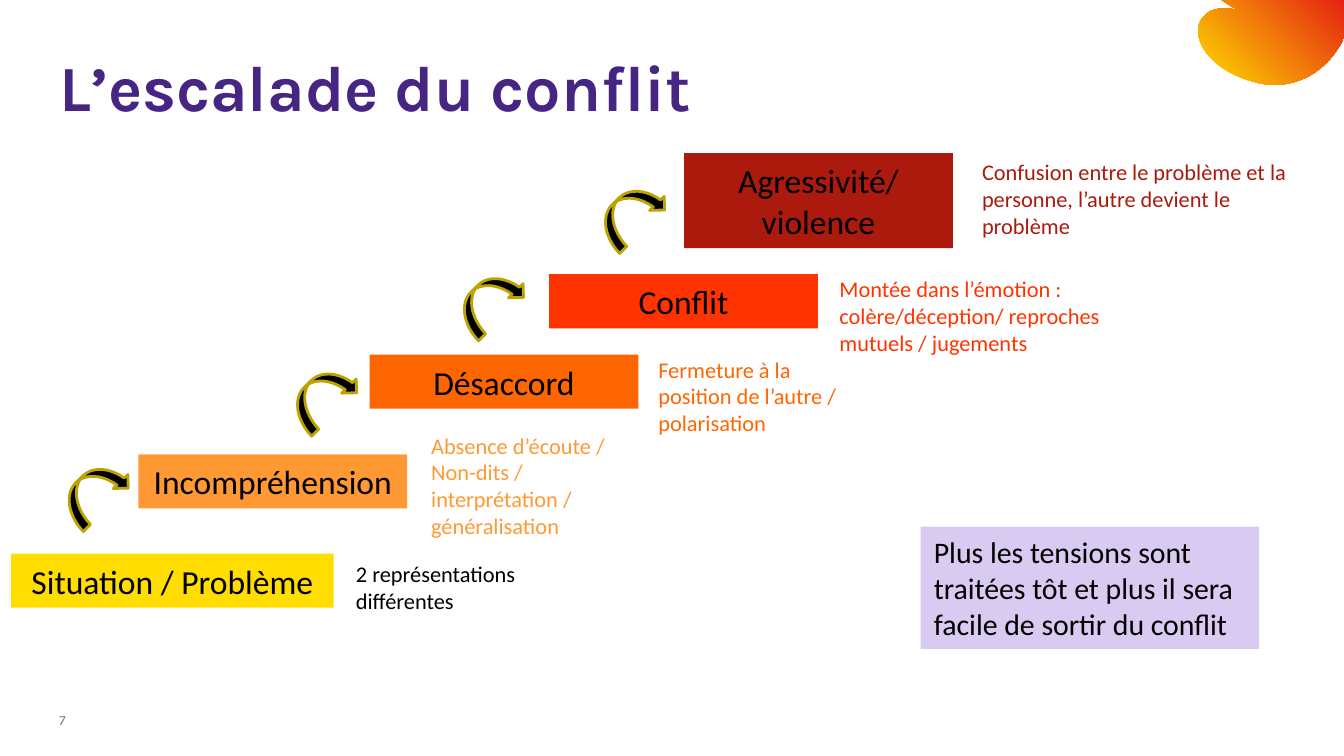
from dataclasses import dataclass
from typing import NamedTuple, Optional

from pptx import Presentation
from pptx.dml.color import RGBColor
from pptx.enum.shapes import MSO_SHAPE as Preset
from pptx.enum.text import MSO_ANCHOR as Anchor, MSO_AUTO_SIZE as AutoSize, PP_ALIGN as Align
from pptx.util import Pt


@dataclass(frozen=True)
class Theme:
    heading_font: str = "Karla"
    body_font: str = "Calibri"
    title_size: float = 34.5
    step_size: float = 18
    advice_size: float = 16
    note_size: float = 12
    number_size: float = 7.5
    title: str = "472583"
    number: str = "808080"
    ink: str = "000000"
    arrow_line: str = "BDA300"
    advice: str = "D8CAF0"
    blob_start: str = "FFDD00"
    blob_end: str = "E42312"


THEME = Theme()


class Area(NamedTuple):
    left: float
    top: float
    width: float
    height: float

    def lengths(self) -> list[Pt]:
        return [Pt(value) for value in self]


class Style(NamedTuple):
    size: float
    colour: str = THEME.ink
    font: str = THEME.body_font
    bold: bool = False


class Step(NamedTuple):
    label: str
    colour: str
    area: Area
    note: str
    note_area: Area
    note_colour: str
    arrow: Optional[tuple[float, float]] = None  # towards the next step


STEPS = [
    Step("Situation / Problème", "FFDD00", Area(6, 296.6, 172.8, 29),
         "2 représentations différentes", Area(183.6, 296.6, 120.2, 36), THEME.ink, (31.7, 252.7)),
    Step("Incompréhension", "FF9933", Area(74.2, 243.4, 144, 29),
         "Absence d’écoute / Non-dits / interprétation / généralisation",
         Area(223.9, 227.7, 120.2, 65.5), "FF9933", (154, 201.6)),
    Step("Désaccord", "FF6600", Area(198, 190, 144, 29),
         "Fermeture à la position de l’autre / polarisation",
         Area(345.6, 187, 120.2, 51), "FF6600", (243.4, 150.5)),
    Step("Conflit", "FF3300", Area(294.2, 146.9, 144, 29),
         "Montée dans l’émotion : colère/déception/ reproches mutuels / jugements",
         Area(442.6, 144, 174.2, 51), "FF3300", (319, 103.7)),
    Step("Agressivité/ violence", "AB1A0D", Area(366.5, 82, 144, 51),
         "Confusion entre le problème et la personne, l’autre devient le problème",
         Area(519, 81.4, 188.6, 51), "AB1A0D"),
]

BLOB_START = [(654.5, 0), (720, 0), (720, 18.7), (719.3, 21.6)]
BLOB_CURVES = [
    [(710.6, 38.9), (692.6, 49.7), (671.8, 43.9)],
    [(645.1, 36.7), (635.8, 16.6), (645.8, 7.9)],
    [(649.4, 4.3), (655.9, 3.6), (665.3, 5.8)],
    [(663.1, 5), (661, 4.3), (658.8, 2.9)],
]


def rgb(colour: str) -> RGBColor:
    return RGBColor.from_string(colour)


def write(box, text: str, style: Style, align=Align.LEFT):
    frame = box.text_frame
    frame.word_wrap = True
    para = frame.paragraphs[0]
    para.alignment = align
    span = para.add_run()
    span.text = text
    span.font.name = style.font
    span.font.size = Pt(style.size)
    span.font.bold = style.bold
    span.font.color.rgb = rgb(style.colour)
    return para


def add_panel(page, area: Area, fill: str, text: str, style: Style, align=Align.LEFT) -> None:
    box = page.shapes.add_shape(Preset.RECTANGLE, *area.lengths())
    box.shadow.inherit = False
    box.fill.solid()
    box.fill.fore_color.rgb = rgb(fill)
    box.line.fill.background()
    write(box, text, style, align)
    box.text_frame.auto_size = AutoSize.SHAPE_TO_FIT_TEXT


def add_note(page, area: Area, text: str, style: Style) -> None:
    box = page.shapes.add_textbox(*area.lengths())
    write(box, text, style)
    box.text_frame.auto_size = AutoSize.SHAPE_TO_FIT_TEXT


def add_flush_text(page, area: Area, text: str, style: Style, anchor):
    """Text box without inner margins; returns its paragraph."""
    box = page.shapes.add_textbox(*area.lengths())
    frame = box.text_frame
    frame.margin_left = frame.margin_top = frame.margin_right = frame.margin_bottom = Pt(0)
    frame.vertical_anchor = anchor
    return write(box, text, style)


def add_arrow(page, left: float, top: float) -> None:
    arrow = page.shapes.add_shape(Preset.CURVED_DOWN_ARROW, *Area(left, top, 38.9, 21.6).lengths())
    arrow.rotation = 316
    arrow.shadow.inherit = False
    arrow.fill.solid()
    arrow.fill.fore_color.rgb = rgb(THEME.ink)
    arrow.line.color.rgb = rgb(THEME.arrow_line)
    arrow.line.width = Pt(1.5)


def curve_points(start, first, second, end, count: int = 24) -> list[tuple[float, float]]:
    """Points along a cubic Bézier curve, without its start."""
    points = []
    for index in range(1, count + 1):
        t = index / count
        u = 1 - t
        points.append(tuple(
            u**3 * a + 3 * u * u * t * b + 3 * u * t * t * c + t**3 * d
            for a, b, c, d in zip(start, first, second, end)))
    return points


def add_corner_blob(page) -> None:
    outline = list(BLOB_START)
    for curve in BLOB_CURVES:
        outline += curve_points(outline[-1], *curve)
    corners = [(Pt(x), Pt(y)) for x, y in outline]
    builder = page.shapes.build_freeform(*corners[0])
    builder.add_line_segments(corners[1:], close=True)
    blob = builder.convert_to_shape()
    blob.shadow.inherit = False
    blob.line.fill.background()
    blob.fill.gradient()
    blob.fill.gradient_angle = 45
    for stop, colour in zip(blob.fill.gradient_stops, (THEME.blob_start, THEME.blob_end)):
        stop.color.rgb = rgb(colour)


def main() -> None:
    deck = Presentation()
    deck.slide_width, deck.slide_height = Pt(720), Pt(405)
    page = deck.slides.add_slide(deck.slide_layouts[6])

    add_corner_blob(page)
    title = add_flush_text(page, Area(31.7, 15, 656.6, 70), "L’escalade du conflit",
                           Style(THEME.title_size, THEME.title, THEME.heading_font, True),
                           Anchor.MIDDLE)
    title.line_spacing = 0.8
    add_flush_text(page, Area(31.7, 383, 42.5, 7.2), "7",
                   Style(THEME.number_size, THEME.number, THEME.heading_font), Anchor.BOTTOM)

    for step in STEPS:
        add_panel(page, step.area, step.colour, step.label, Style(THEME.step_size), Align.CENTER)
        add_note(page, step.note_area, step.note, Style(THEME.note_size, step.note_colour))
        if step.arrow:
            add_arrow(page, *step.arrow)

    add_panel(page, Area(493.2, 282.2, 181.4, 65.5), THEME.advice,
              "Plus les tensions sont traitées tôt et plus il sera facile de sortir du conflit",
              Style(THEME.advice_size))
    deck.save("out.pptx")


if __name__ == "__main__":
    main()
